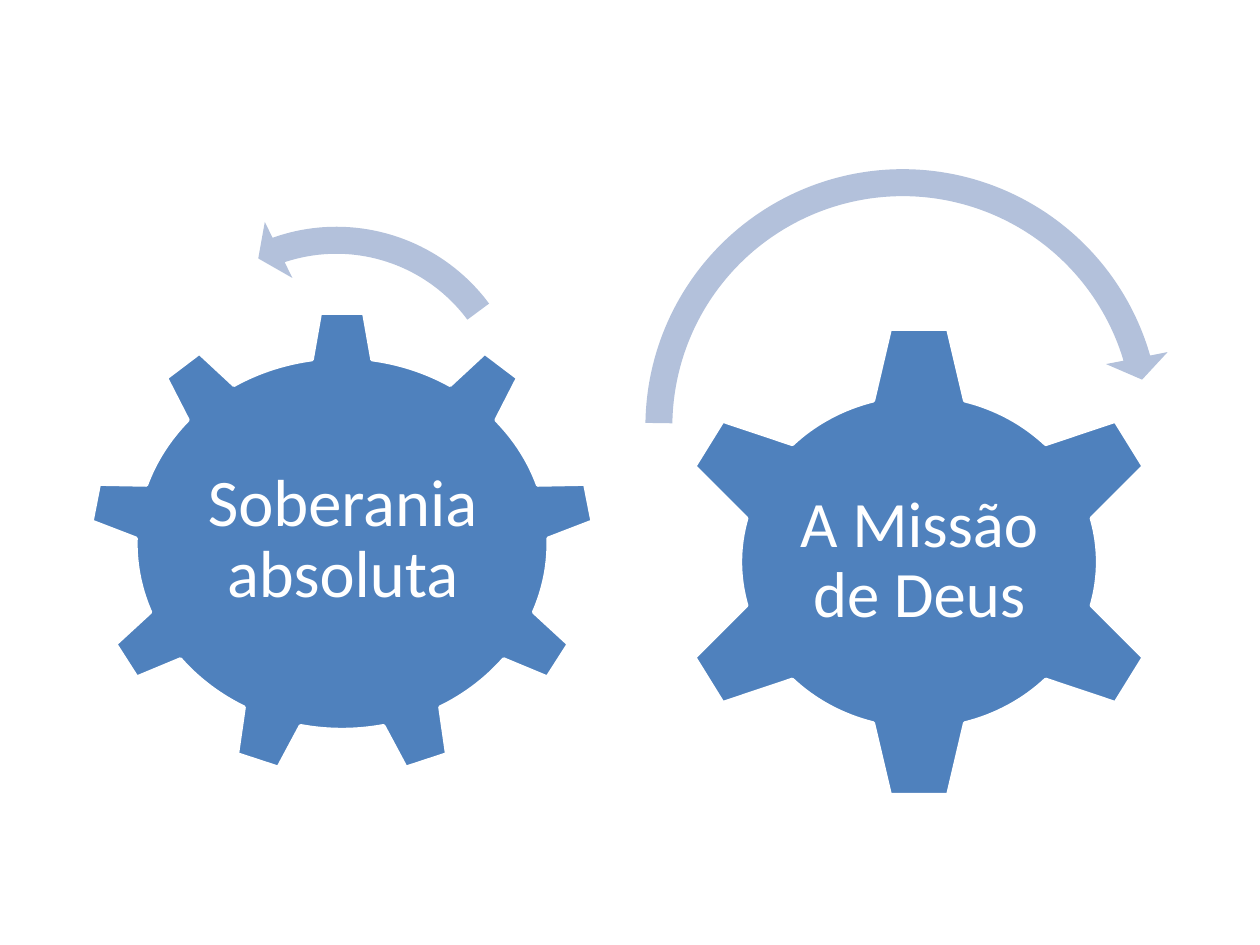
from pptx import Presentation
from pptx.dml.color import RGBColor
from pptx.enum.shapes import MSO_SHAPE as Shape
from pptx.enum.text import MSO_ANCHOR as Anchor, PP_ALIGN as Align
from pptx.util import Pt

COLORS = {"gear": "4F81BD", "arrow": "B3C1DB", "white": "FFFFFF"}


def color(name):
    return RGBColor.from_string(COLORS[name])


def place(shapes, kind, box, fill):
    """Add a preset shape without a shadow."""
    shape = shapes.add_shape(kind, *map(Pt, box))
    shape.shadow.inherit = False
    shape.fill.solid()
    shape.fill.fore_color.rgb = color(fill)
    return shape


def add_gear(slide, kind, box, inner, text, size):
    """Group a gear with its label; inner is relative to the gear's corner."""
    shapes = slide.shapes.add_group_shape().shapes
    gear = place(shapes, kind, box, "gear")
    gear.line.color.rgb = color("white")
    gear.line.width = Pt(2)

    left, top, width, height = inner
    label = shapes.add_textbox(
        Pt(box[0] + left), Pt(box[1] + top), Pt(width), Pt(height))
    frame = label.text_frame
    form = {"word_wrap": True, "vertical_anchor": Anchor.MIDDLE}
    for side in ("left", "top", "right", "bottom"):
        form[f"margin_{side}"] = Pt(3.6)
    for key, value in form.items():
        setattr(frame, key, value)

    para = frame.paragraphs[0]
    para.alignment = Align.CENTER
    para.line_spacing = 0.9
    run = para.add_run()
    run.text = text
    run.font.name = "Calibri"
    run.font.size = Pt(size)
    run.font.color.rgb = color("white")


def add_arrow(slide, kind, left, top, side, turn, bends):
    """Add a curved arrow in a square box."""
    arrow = place(slide.shapes, kind, (left, top, side, side), "arrow")
    arrow.line.fill.background()
    arrow.rotation = turn
    for i, bend in enumerate(bends):
        arrow.adjustments[i] = bend


def main():
    deck = Presentation()
    deck.slide_width, deck.slide_height = Pt(720), Pt(540)
    slide = deck.slides.add_slide(deck.slide_layouts[6])
    add_gear(slide, Shape.GEAR_6, (382.3, 185, 285.8, 272.2),
             (70.6, 69.1, 144.7, 133.9), "A Missão de Deus", 37)
    add_gear(slide, Shape.GEAR_9, (51.1, 177.8, 288.7, 265.7),
             (56.9, 62.7, 175.7, 136.8), "Soberania absoluta", 38)
    add_arrow(slide, Shape.LEFT_CIRCULAR_ARROW, 73.4, 119.5, 237.6, 76.1,
              (0.065, 4.3, 104.89, 148.38, 0.075))
    add_arrow(slide, Shape.CIRCULAR_ARROW, 358.6, 86.4, 314.6, 289.5,
              (0.049, 3.13, 32.52, 150.79, 0.057))
    deck.save("out.pptx")


if __name__ == "__main__":
    main()
